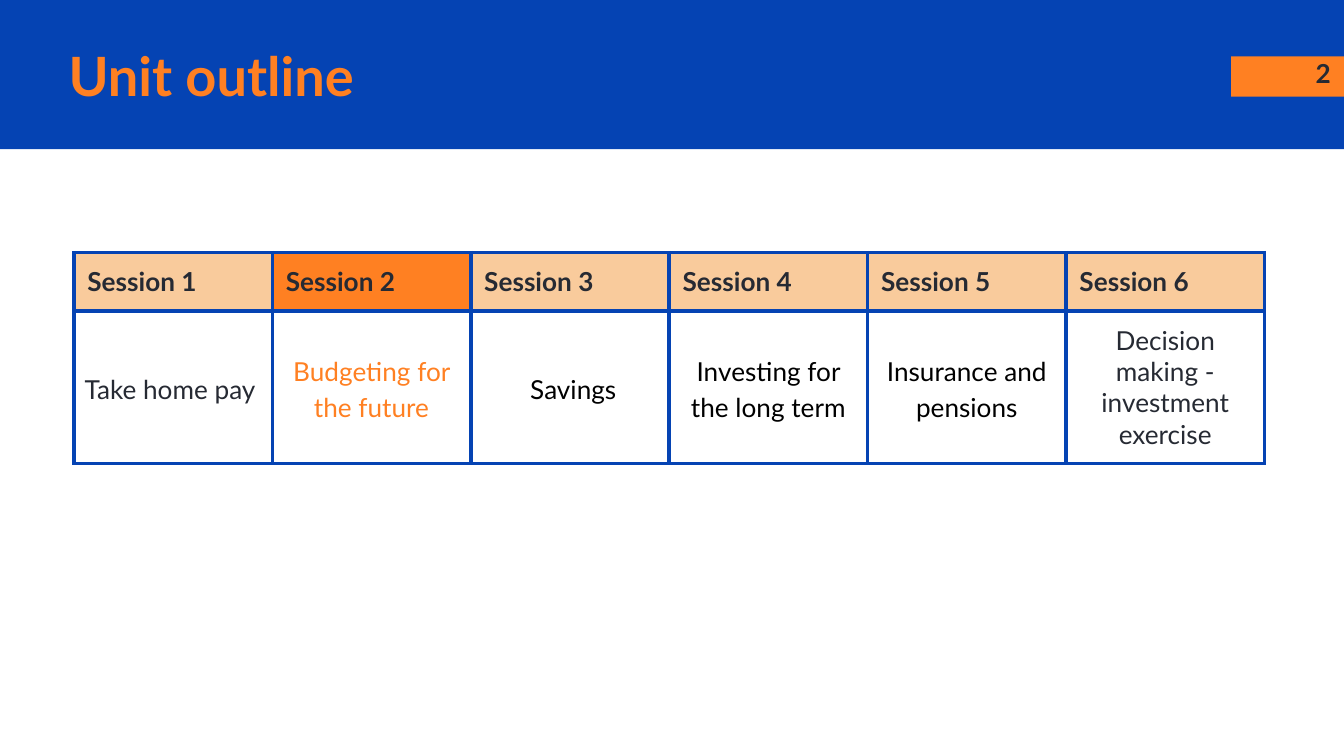
from pptx import Presentation
from pptx.dml.color import RGBColor
from pptx.enum.shapes import MSO_SHAPE
from pptx.enum.text import MSO_ANCHOR, PP_ALIGN
from pptx.oxml import parse_xml
from pptx.oxml.ns import nsdecls
from pptx.util import Inches, Pt

RECT = MSO_SHAPE.RECTANGLE
MIDDLE = MSO_ANCHOR.MIDDLE
LEFT, CENTER, RIGHT = PP_ALIGN.LEFT, PP_ALIGN.CENTER, PP_ALIGN.RIGHT

BLUE = RGBColor(0x05, 0x43, 0xB3)
ORANGE = RGBColor(0xFF, 0x80, 0x22)
PEACH = RGBColor(0xF9, 0xCB, 0x9C)
DARK = RGBColor(0x26, 0x2A, 0x33)
BLACK = RGBColor(0, 0, 0)
WHITE = RGBColor(0xFF, 0xFF, 0xFF)


def set_text(box, text, size, color, bold, align, inset=0.1):
    box.margin_left = box.margin_right = Inches(inset)
    box.margin_top = box.margin_bottom = Inches(inset)
    tf = getattr(box, "text_frame", box)
    p = tf.paragraphs[0]
    p.text = text
    p.alignment = align
    p.font.name = "Lato"
    p.font.size = Pt(size)
    p.font.bold = bold
    p.font.color.rgb = color
    return p


def set_cell(cell, fill):
    tcPr = cell._tc.get_or_add_tcPr()
    for tag in ("lnL", "lnR", "lnT", "lnB"):
        tcPr.append(parse_xml(
            f'<a:{tag} {nsdecls("a")} w="{Pt(2.25)}"><a:solidFill>'
            f'<a:srgbClr val="{BLUE}"/></a:solidFill></a:{tag}>'))
    cell.fill.solid()
    cell.fill.fore_color.rgb = fill


# 16:9 slide
prs = Presentation()
prs.slide_width = Inches(10)
prs.slide_height = Inches(10 * 9 / 16)
s = prs.slides.add_slide(prs.slide_layouts[5])

# Header band and page number tab
for x, y, w, h, color in [(0, 0, 10, 1.11, BLUE), (9.16, 0.42, 0.84, 0.3, ORANGE)]:
    sp = s.shapes.add_shape(RECT, Inches(x), Inches(y), Inches(w), Inches(h))
    sp.shadow.inherit = False
    sp.fill.solid()
    sp.fill.fore_color.rgb = color
    sp.line.fill.background()

# Page number
box = s.shapes.add_textbox(Inches(9.4), Inches(0.33), Inches(0.6), Inches(0.43))
box.text_frame.word_wrap = True
set_text(box.text_frame, "2", 14, DARK, True, RIGHT)

# Title, brought in front of the band
title = s.shapes.title
title.left, title.top = Inches(0.41), Inches(0.28)
title.width, title.height = Inches(8.46), Inches(0.56)
title.text_frame.vertical_anchor = MIDDLE
set_text(title.text_frame, "Unit outline", 29, ORANGE, True, LEFT)
s.shapes._spTree.append(title._element)

# Session table: topic, text colour, inset, line spacing
sessions = [
    ("Take home pay ", DARK, 0.07, 1.15),
    ("Budgeting for the future", ORANGE, 0.07, 1.15),
    (" Savings", BLACK, 0.07, 1.15),
    ("Investing for the long term", BLACK, 0.07, 1.15),
    ("Insurance and pensions", BLACK, 0.07, 1.15),
    ("Decision making - investment exercise", DARK, 0.1, 1.0),
]
CURRENT = 2
TABLE_W = 8.86
ROW_H = (0.43, 1.13)
table = s.shapes.add_table(
    len(ROW_H), len(sessions), Inches(0.55), Inches(1.88),
    Inches(TABLE_W), Inches(sum(ROW_H))).table
for row, height in zip(table.rows, ROW_H):
    row.height = Inches(height)

for i, (topic, color, inset, spacing) in enumerate(sessions):
    table.columns[i].width = Inches(TABLE_W / len(sessions))
    head, body = table.cell(0, i), table.cell(1, i)
    set_cell(head, ORANGE if i + 1 == CURRENT else PEACH)
    set_text(head, f"Session {i + 1}", 14, DARK, True, LEFT)
    set_cell(body, WHITE)
    p = set_text(body, topic, 14, color, False, CENTER, inset)
    p.line_spacing = spacing
    body.vertical_anchor = MIDDLE

prs.save("out.pptx")
